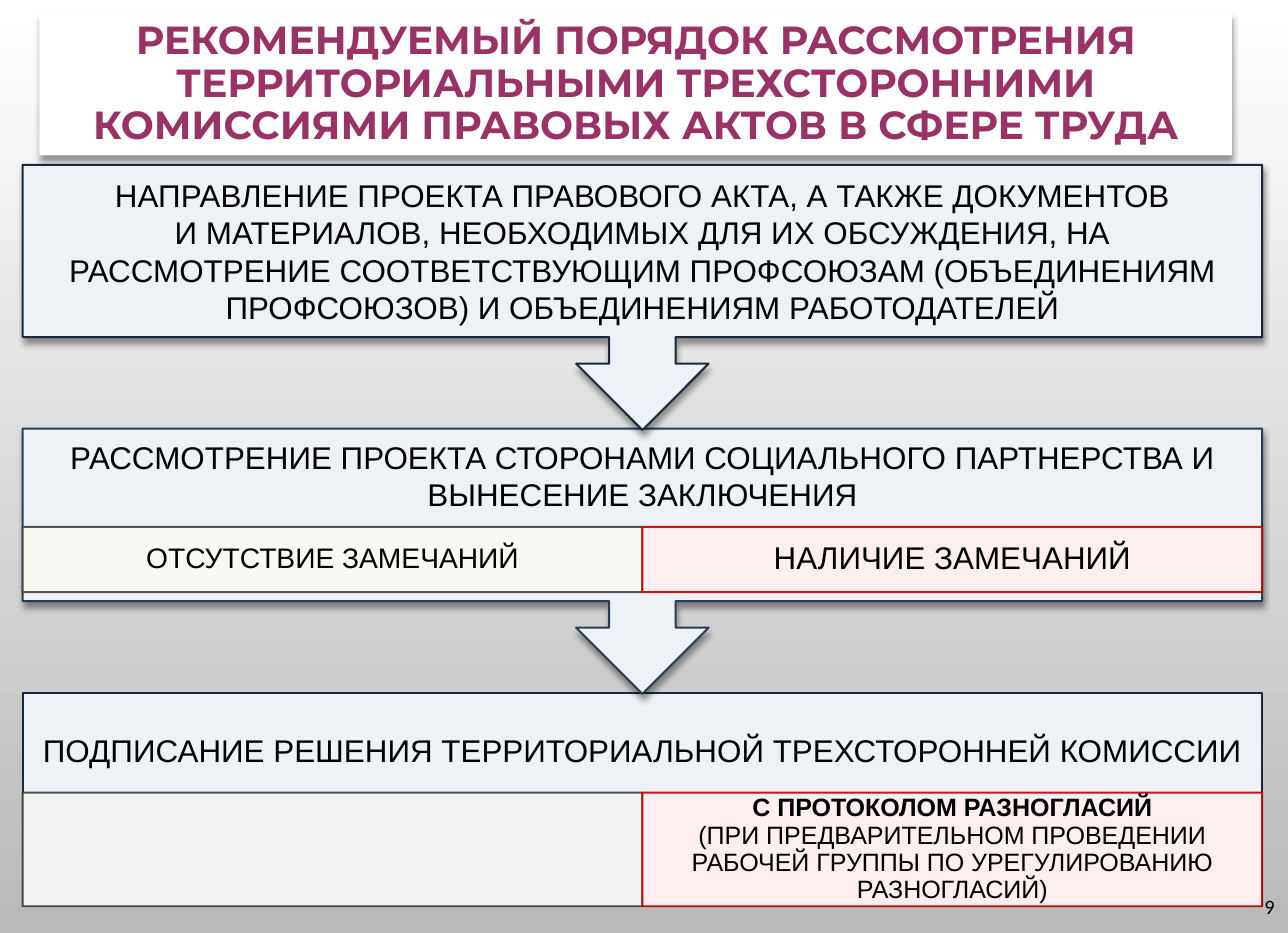
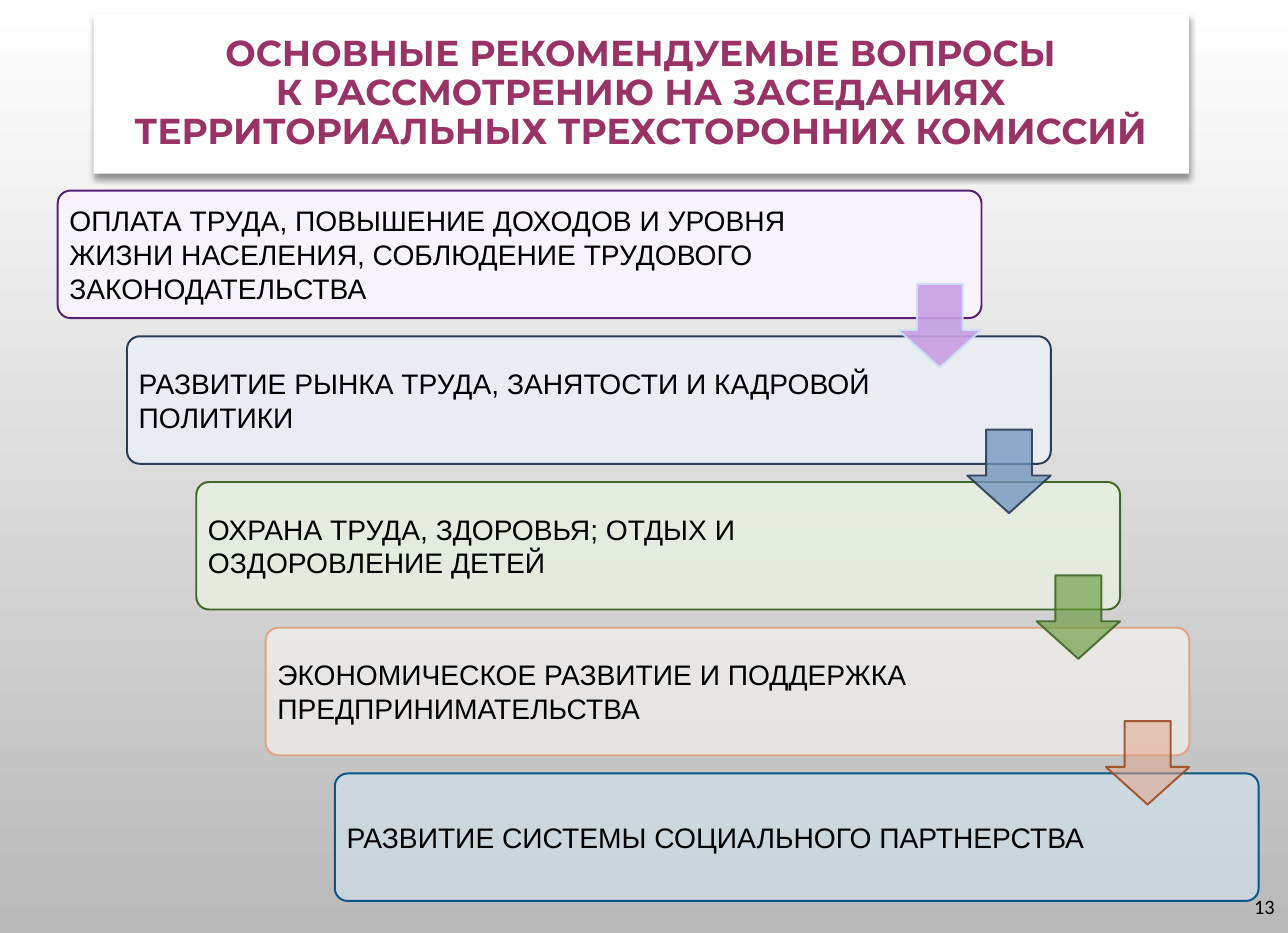
import pptx
import pptx.util
import pptx.dml.color
import pptx.enum.shapes
import pptx.enum.text
import pptx.oxml
import pptx.oxml.ns
import lxml.etree

Cm = pptx.util.Cm
Pt = pptx.util.Pt
RGBColor = pptx.dml.color.RGBColor
SHAPE = pptx.enum.shapes.MSO_SHAPE
ALIGN = pptx.enum.text.PP_ALIGN
qn = pptx.oxml.ns.qn

WHITE = RGBColor(0xFF, 0xFF, 0xFF)
BLACK = RGBColor(0x00, 0x00, 0x00)
BACKGROUND_END = RGBColor(0xB9, 0xB9, 0xB9)
TITLE_COLOUR = RGBColor(0x99, 0x33, 0x66)
STEP_FILL = RGBColor(0xEE, 0xF2, 0xF7)
NAVY = RGBColor(0x1A, 0x28, 0x39)
STEEL = RGBColor(0x28, 0x3C, 0x55)
NEUTRAL_LINE = RGBColor(0x43, 0x41, 0x3B)
GREY_FILL = RGBColor(0xF2, 0xF2, 0xF2)
GREEN_FILL = RGBColor(0xF7, 0xFB, 0xF3)
RED_FILL = RGBColor(0xFF, 0xEF, 0xEF)
RED_LINE = RGBColor(0xC0, 0x00, 0x00)
VIOLET_FILL = RGBColor(0xF8, 0xF3, 0xFB)
VIOLET_LINE = RGBColor(0x54, 0x21, 0x76)
VIOLET_ARROW = RGBColor(0xC8, 0x9E, 0xE3)
PALE_BLUE = RGBColor(0xCD, 0xE0, 0xF8)
BLUE_FILL = RGBColor(0xEB, 0xEF, 0xF5)
BLUE_ARROW = RGBColor(0x72, 0x94, 0xBD)
LEAF_FILL = RGBColor(0xEB, 0xF5, 0xE3)
LEAF_LINE = RGBColor(0x42, 0x66, 0x26)
LEAF_ARROW = RGBColor(0x64, 0x99, 0x39)
CREAM_FILL = RGBColor(0xFC, 0xF8, 0xF2)
PEACH = RGBColor(0xE2, 0xA3, 0x85)
BROWN = RGBColor(0x9B, 0x4C, 0x25)
SKY_FILL = RGBColor(0xD8, 0xED, 0xFC)
SKY_LINE = RGBColor(0x0B, 0x54, 0x84)

BODY_FONT, TITLE_FONT, NUMBER_FONT = "Arial", "Montserrat", "Calibri"
TITLE_INSETS = (0.33, 0.15, 0.33, 0.15)

# Title text, point size, place (left, top, width, height in cm), page number
PROCEDURE_HEAD = (
    "РЕКОМЕНДУЕМЫЙ ПОРЯДОК РАССМОТРЕНИЯ ТЕРРИТОРИАЛЬНЫМИ ТРЕХСТОРОННИМИ "
    "КОМИССИЯМИ ПРАВОВЫХ АКТОВ В СФЕРЕ ТРУДА",
    25, (0.89, 0.3, 26.85, 3.2), "9")
TOPICS_HEAD = (
    "ОСНОВНЫЕ РЕКОМЕНДУЕМЫЕ ВОПРОСЫ\vК РАССМОТРЕНИЮ НА ЗАСЕДАНИЯХ "
    "ТЕРРИТОРИАЛЬНЫХ ТРЕХСТОРОННИХ КОМИССИЙ",
    23, (2.11, 0.3, 24.66, 3.61), "13")

# Paragraphs, outline, preset, height, top and bottom text inset, shadow
STEPS = [
    (["НАПРАВЛЕНИЕ ПРОЕКТА ПРАВОВОГО АКТА, А ТАКЖЕ ДОКУМЕНТОВ",
      "И МАТЕРИАЛОВ, НЕОБХОДИМЫХ ДЛЯ ИХ ОБСУЖДЕНИЯ, НА РАССМОТРЕНИЕ "
      "СООТВЕТСТВУЮЩИМ ПРОФСОЮЗАМ (ОБЪЕДИНЕНИЯМ ПРОФСОЮЗОВ) И ОБЪЕДИНЕНИЯМ "
      "РАБОТОДАТЕЛЕЙ"],
     NAVY, SHAPE.DOWN_ARROW_CALLOUT, 5.97, 0.1, 0.1, True),
    (["РАССМОТРЕНИЕ ПРОЕКТА СТОРОНАМИ СОЦИАЛЬНОГО ПАРТНЕРСТВА И "
      "ВЫНЕСЕНИЕ ЗАКЛЮЧЕНИЯ"],
     STEEL, SHAPE.DOWN_ARROW_CALLOUT, 5.97, 0.1, 1.88, True),
    (["ПОДПИСАНИЕ РЕШЕНИЯ ТЕРРИТОРИАЛЬНОЙ ТРЕХСТОРОННЕЙ КОМИССИИ"],
     NAVY, SHAPE.RECTANGLE, 4.8, 0.4, 2.61, False),
]
STEP_LEFT, STEP_TOP, STEP_WIDTH, STEP_PITCH = 0.51, 3.71, 27.91, 5.94

# Top and height of a row, then its cells: paragraphs, size, fill, outline
OUTCOME_ROWS = [
    (11.86, 1.47, [
        (["ОТСУТСТВИЕ ЗАМЕЧАНИЙ"], 18, GREEN_FILL, NEUTRAL_LINE),
        (["НАЛИЧИЕ ЗАМЕЧАНИЙ"], 20, RED_FILL, RED_LINE)]),
    (17.84, 2.56, [
        ([], 16, GREY_FILL, NEUTRAL_LINE),
        (["С ПРОТОКОЛОМ РАЗНОГЛАСИЙ",
          "(ПРИ ПРЕДВАРИТЕЛЬНОМ ПРОВЕДЕНИИ РАБОЧЕЙ ГРУППЫ ПО "
          "УРЕГУЛИРОВАНИЮ РАЗНОГЛАСИЙ)"], 16, RED_FILL, RED_LINE)]),
]

# Text, fill, opacity, outline
TOPICS = [
    ("ОПЛАТА ТРУДА, ПОВЫШЕНИЕ ДОХОДОВ И УРОВНЯ ЖИЗНИ НАСЕЛЕНИЯ, "
     "СОБЛЮДЕНИЕ ТРУДОВОГО ЗАКОНОДАТЕЛЬСТВА", VIOLET_FILL, 100, VIOLET_LINE),
    ("РАЗВИТИЕ РЫНКА ТРУДА, ЗАНЯТОСТИ И КАДРОВОЙ ПОЛИТИКИ",
     BLUE_FILL, 80, STEEL),
    ("ОХРАНА ТРУДА, ЗДОРОВЬЯ; ОТДЫХ И ОЗДОРОВЛЕНИЕ ДЕТЕЙ",
     LEAF_FILL, 70, LEAF_LINE),
    ("ЭКОНОМИЧЕСКОЕ РАЗВИТИЕ И ПОДДЕРЖКА ПРЕДПРИНИМАТЕЛЬСТВА",
     CREAM_FILL, 60, PEACH),
    ("РАЗВИТИЕ СИСТЕМЫ СОЦИАЛЬНОГО ПАРТНЕРСТВА", SKY_FILL, 50, SKY_LINE),
]
# Fill, opacity, outline
TOPIC_ARROWS = [
    (VIOLET_ARROW, 90, PALE_BLUE),
    (BLUE_ARROW, 77, STEEL),
    (LEAF_ARROW, 63, LEAF_LINE),
    (PEACH, 50, BROWN),
]
CARD_LEFT, CARD_TOP, CARD_WIDTH, CARD_HEIGHT = 1.3, 4.29, 20.8, 2.87
CARD_SHIFT, CARD_PITCH = 1.56, 3.28
ARROW_SIZE, ARROW_DROP = 1.88, 2.1


def set_opacity(parent, percent):
    """Make the solid fill directly inside an XML element translucent."""
    if percent < 100:
        colour = parent.find(qn("a:solidFill")).find(qn("a:srgbClr"))
        lxml.etree.SubElement(colour, qn("a:alpha"), val=str(percent * 1000))


def add_shadow(shape):
    effects = shape.element.spPr.find(qn("a:effectLst"))
    shadow = lxml.etree.SubElement(
        effects, qn("a:outerShdw"), blurRad=str(Pt(4)), dist=str(Pt(3)),
        dir="5400000", algn="t", rotWithShape="0")
    colour = lxml.etree.SubElement(shadow, qn("a:srgbClr"), val="000000")
    lxml.etree.SubElement(colour, qn("a:alpha"), val="40000")


def add_block(slide, preset, place, fill, outline=None, opacity=100,
              outline_opacity=100, shadow=False):
    shape = slide.shapes.add_shape(preset, *map(Cm, place))
    shape.shadow.inherit = False
    shape.fill.solid()
    shape.fill.fore_color.rgb = fill
    set_opacity(shape.element.spPr, opacity)
    if outline is None:
        shape.line.fill.background()
    else:
        shape.line.color.rgb = outline
        shape.line.width = Pt(1.25)
        set_opacity(shape.element.spPr.find(qn("a:ln")), outline_opacity)
    if shadow:
        add_shadow(shape)
    return shape


def write(shape, paragraphs, size, insets, font=BODY_FONT, colour=BLACK,
          bold=False, align=ALIGN.CENTER, spacing=1.0):
    """Fill a shape with text; insets are left, top, right, bottom in cm."""
    frame = shape.text_frame
    frame.word_wrap = True
    frame.vertical_anchor = pptx.enum.text.MSO_ANCHOR.MIDDLE
    (frame.margin_left, frame.margin_top,
     frame.margin_right, frame.margin_bottom) = map(Cm, insets)
    frame.text = "\n".join(paragraphs)
    for para in frame.paragraphs:
        para.alignment = align
        para.line_spacing = spacing
        for span in para.runs:
            span.font.name = font
            span.font.size = Pt(size)
            span.font.bold = bold
            span.font.color.rgb = colour


def add_page(deck, head):
    """Add a slide with its title panel and page number."""
    title, size, place, number = head
    slide = deck.slides.add_slide(deck.slide_layouts[6])
    panel = add_block(slide, SHAPE.RECTANGLE, place, WHITE, shadow=True)
    write(panel, [title], size, TITLE_INSETS, TITLE_FONT, TITLE_COLOUR,
          bold=True, spacing=0.9)
    box = slide.shapes.add_textbox(Cm(27.2), Cm(19.85), Cm(1.83), Cm(1.12))
    write(box, [number], 13, TITLE_INSETS, NUMBER_FONT, align=ALIGN.RIGHT)
    return slide


def build_procedure(deck):
    slide = add_page(deck, PROCEDURE_HEAD)
    # Last step first, so that each arrow tip lies over the next step
    for index, step in reversed(list(enumerate(STEPS))):
        paragraphs, outline, preset, height, above, below, shadow = step
        place = (STEP_LEFT, STEP_TOP + index * STEP_PITCH, STEP_WIDTH, height)
        block = add_block(slide, preset, place, STEP_FILL, outline,
                          shadow=shadow)
        write(block, paragraphs, 20, (0.4, above, 0.4, below))
    for top, height, cells in OUTCOME_ROWS:
        width = STEP_WIDTH / len(cells)
        for column, (paragraphs, size, fill, outline) in enumerate(cells):
            place = (STEP_LEFT + column * width, top, width, height)
            cell = add_block(slide, SHAPE.RECTANGLE, place, fill, outline,
                             opacity=90, outline_opacity=90)
            if paragraphs:
                write(cell, paragraphs, size, (0.3, 0.05, 0.3, 0.05),
                      spacing=0.9)
            if len(paragraphs) > 1:
                cell.text_frame.paragraphs[0].runs[0].font.bold = True


def build_topics(deck):
    slide = add_page(deck, TOPICS_HEAD)
    corners = [(CARD_LEFT + index * CARD_SHIFT, CARD_TOP + index * CARD_PITCH)
               for index in range(len(TOPICS))]
    for (left, top), (text, fill, opacity, outline) in zip(corners, TOPICS):
        card = add_block(slide, SHAPE.ROUNDED_RECTANGLE,
                         (left, top, CARD_WIDTH, CARD_HEIGHT),
                         fill, outline, opacity)
        card.adjustments[0] = 0.1
        write(card, [text], 18, (0.18, 0.18, 3.55, 0.18), align=ALIGN.LEFT)
    for (left, top), (fill, opacity, outline) in zip(corners, TOPIC_ARROWS):
        place = (left + CARD_WIDTH - ARROW_SIZE, top + ARROW_DROP,
                 ARROW_SIZE, ARROW_SIZE)
        arrow = add_block(slide, SHAPE.DOWN_ARROW, place, fill, outline,
                          opacity, outline_opacity=90)
        arrow.adjustments[0] = 0.55
        arrow.adjustments[1] = 0.45


def main():
    deck = pptx.Presentation()
    deck.slide_width, deck.slide_height = Cm(29), Cm(21)
    backdrop = deck.slide_master.background.fill
    backdrop.gradient()
    backdrop.gradient_angle = 270
    for stop, colour in zip(backdrop.gradient_stops, (WHITE, BACKGROUND_END)):
        stop.color.rgb = colour
    build_procedure(deck)
    build_topics(deck)
    deck.save("out.pptx")


if __name__ == "__main__":
    main()
